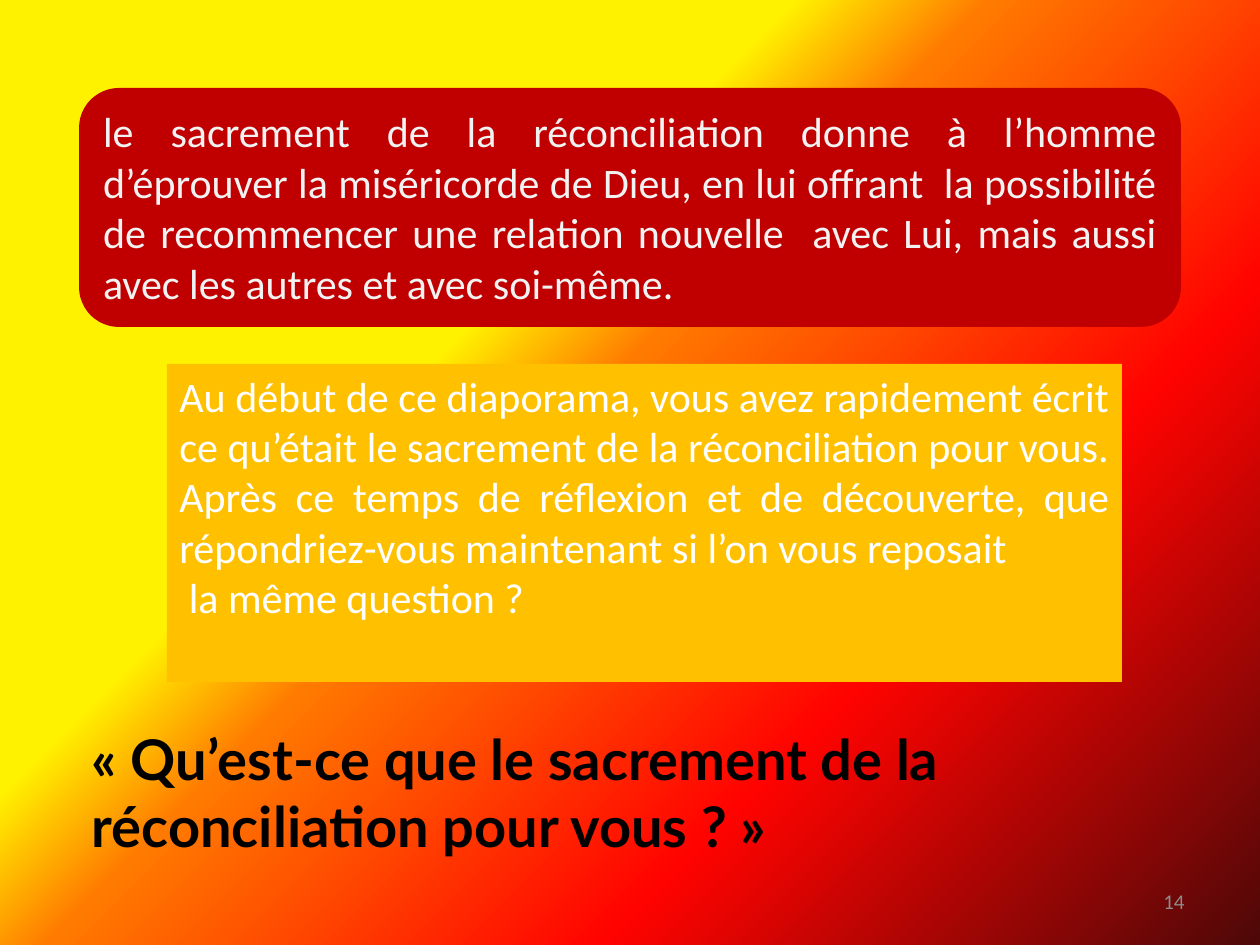
from lxml import etree
from pptx import Presentation
from pptx.dml.color import RGBColor
from pptx.enum.shapes import MSO_SHAPE as SHAPE
from pptx.enum.text import MSO_ANCHOR as ANCHOR, MSO_AUTO_SIZE as AUTO, PP_ALIGN as ALIGN
from pptx.oxml.ns import qn
from pptx.util import Emu, Pt

COLORS = {
    "red": "C00000", "amber": "FFC000", "pale": "F2F2F2",
    "white": "FFFFFF", "black": "000000", "grey": "8C8C8C",
}
GRADIENT = [(36, "FFF200"), (45, "FF7A00"), (70, "FF0300"), (100, "4D0808")]


def px(n):
    return Emu(round(n * 914400 / 126))


def write(sp, *lines, size=24, color="white", font="Calibri", bold=False,
          align=ALIGN.JUSTIFY, anchor=ANCHOR.TOP):
    tf = sp.text_frame
    tf.word_wrap = True
    tf.auto_size = AUTO.NONE
    tf.vertical_anchor = anchor
    for i, line in enumerate(lines):
        p = tf.add_paragraph() if i else tf.paragraphs[0]
        p.alignment = align
        r = p.add_run()
        r.text = line
        r.font.size = Pt(size)
        r.font.name = font
        r.font.bold = bold
        r.font.color.rgb = RGBColor.from_string(COLORS[color])


prs = Presentation()
prs.slide_width, prs.slide_height = px(1260), px(945)
s = prs.slides.add_slide(prs.slide_layouts[5])

# Diagonal background gradient
fill = s.background.fill
fill.gradient()
fill.gradient_angle = 315
stops = fill.gradient_stops
gs_list = s.background._cSld.find(".//" + qn("a:gsLst"))
for gs in list(gs_list):
    gs_list.remove(gs)
for pos, color in GRADIENT:
    gs = etree.SubElement(gs_list, qn("a:gs"), pos=str(pos * 1000))
    etree.SubElement(gs, qn("a:srgbClr"), val=color)

# Two filled panels
panels = [
    (SHAPE.ROUNDED_RECTANGLE, (79, 88, 1102, 239), "red", "pale",
     ["le sacrement de la réconciliation donne à l’homme d’éprouver la miséricorde "
      "de Dieu, en lui offrant  la possibilité de recommencer une relation nouvelle  "
      "avec Lui, mais aussi avec les autres et avec soi-même."]),
    (SHAPE.RECTANGLE, (167, 364, 955, 318), "amber", "white",
     ["Au début de ce diaporama, vous avez rapidement écrit ce qu’était le sacrement "
      "de la réconciliation pour vous. Après ce temps de réflexion et de découverte, "
      "que répondriez-vous maintenant si l’on vous reposait",
      " la même question ?"]),
]
for kind, box, back, ink, lines in panels:
    sp = s.shapes.add_shape(kind, *map(px, box))
    sp.shadow.inherit = False
    sp.fill.solid()
    sp.fill.fore_color.rgb = RGBColor.from_string(COLORS[back])
    sp.line.fill.background()
    write(sp, *lines, color=ink)

# Closing question
title = s.shapes.title
title.left, title.top, title.width, title.height = map(px, (79, 718, 1141, 147))
write(title, "« Qu’est-ce que le sacrement de la réconciliation pour vous ? »",
      size=32, color="black", font="Lato", bold=True, align=ALIGN.LEFT)

# Slide number
number = s.shapes.add_textbox(*map(px, (903, 876, 294, 50)))
write(number, "14", size=12, color="grey", align=ALIGN.RIGHT, anchor=ANCHOR.MIDDLE)

prs.save("out.pptx")
